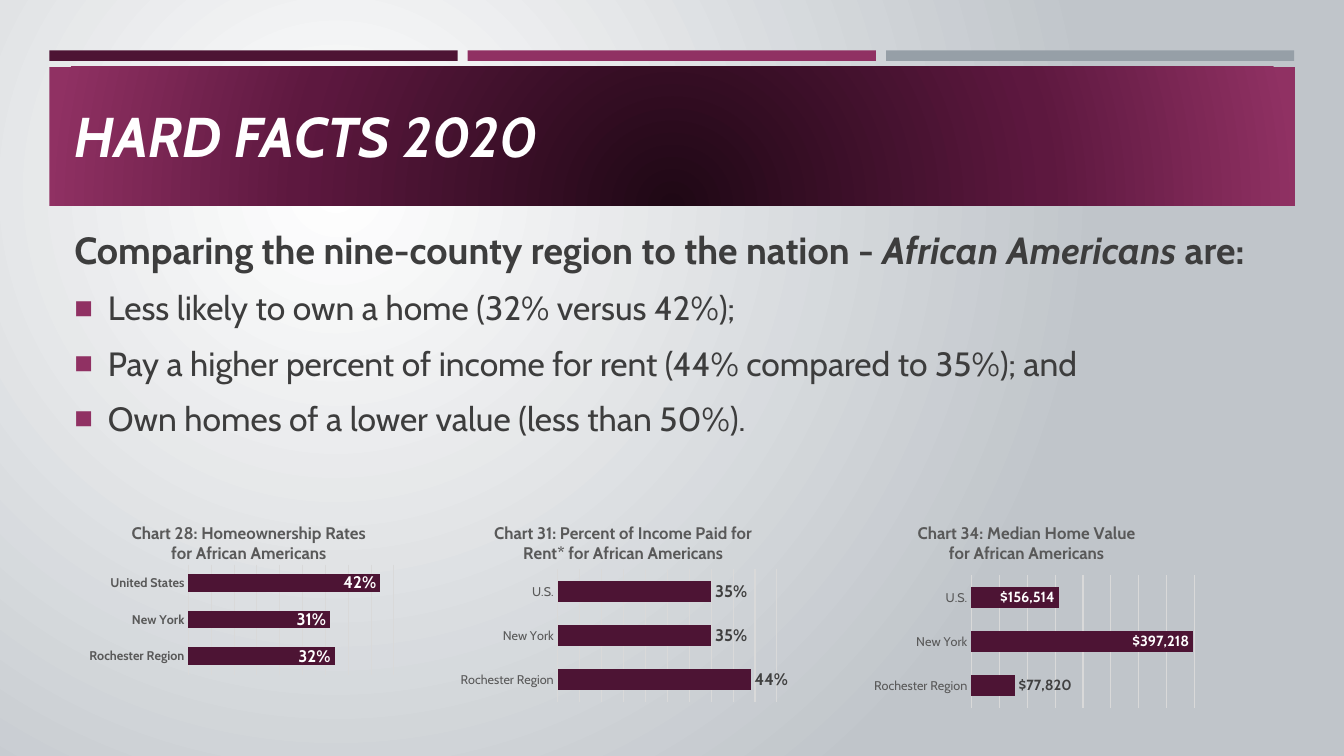
from lxml.etree import SubElement
from pptx import Presentation
from pptx.chart.data import CategoryChartData
from pptx.dml.color import RGBColor
from pptx.enum.chart import XL_CHART_TYPE, XL_LABEL_POSITION, XL_TICK_MARK
from pptx.enum.shapes import MSO_SHAPE
from pptx.enum.text import MSO_ANCHOR, MSO_AUTO_SIZE, PP_ALIGN
from pptx.oxml import parse_xml
from pptx.oxml.ns import nsdecls, qn
from pptx.util import Pt

FONT = "Cabin"
PLUM, MAGENTA, GRAY = "4D1434", "903163", "969FA7"
WHITE, BODY, LABEL, MUTED, GRID = "FFFFFF", "3D3D3D", "404040", "595959", "D9D9D9"
INSIDE, OUTSIDE = XL_LABEL_POSITION.INSIDE_END, XL_LABEL_POSITION.OUTSIDE_END
rgb = RGBColor.from_string


def style(font, size, color, bold=False, italic=False):
    font.name, font.size, font.bold, font.italic = FONT, Pt(size), bold, italic
    font.color.rgb = rgb(color)


def radial_gradient(fill, element, stops, focus):
    """Give element a circular gradient; focus holds the l, t, r, b percentages."""
    fill.gradient()
    gradient = element.find(".//" + qn("a:gradFill"))
    gradient.clear()
    stop_list = SubElement(gradient, qn("a:gsLst"))
    for position, color in stops:
        stop = SubElement(stop_list, qn("a:gs"), pos=str(position * 1000))
        SubElement(stop, qn("a:srgbClr"), val=color)
    circle = SubElement(gradient, qn("a:path"), path="circle")
    sides = {side: str(percent * 1000) for side, percent in zip("ltrb", focus)}
    SubElement(circle, qn("a:fillToRect"), **sides)


presentation = Presentation()
presentation.slide_width, presentation.slide_height = Pt(960), Pt(540)
slide = presentation.slides.add_slide(presentation.slide_layouts[5])
radial_gradient(slide.background.fill, slide._element,
                [(0, WHITE), (100, "C0C5CA")], (50, 50, 100, 100))

# Header strips and title band
for column, color in enumerate((PLUM, MAGENTA, GRAY)):
    strip = slide.shapes.add_shape(MSO_SHAPE.RECTANGLE, Pt(35.3 + 298.8 * column),
                                   Pt(36), Pt(291.6), Pt(7.5))
    strip.shadow.inherit = False
    strip.fill.solid()
    strip.fill.fore_color.rgb = rgb(color)
    strip.line.fill.background()

band = slide.shapes.add_shape(MSO_SHAPE.RECTANGLE, Pt(35.3), Pt(47.5), Pt(889.9), Pt(99.4))
band.shadow.inherit = False
band.line.fill.background()
radial_gradient(band.fill, band._element,
                [(0, "1F0815"), (60, "5D183F"), (100, MAGENTA)], (50, 130, 50, -30))

title = slide.shapes.title
slide.shapes._spTree.append(title._element)  # in front of the band
title.left, title.top, title.width, title.height = Pt(46), Pt(57.6), Pt(868.3), Pt(77.8)
title.text_frame.auto_size = MSO_AUTO_SIZE.NONE
title.text_frame.vertical_anchor = MSO_ANCHOR.MIDDLE
heading = title.text_frame.paragraphs[0]
heading.alignment = PP_ALIGN.LEFT
heading_run = heading.add_run()
heading_run.text = "HARD FACTS 2020"
style(heading_run.font, 40, WHITE, bold=True, italic=True)

# Findings
findings = slide.shapes.add_textbox(Pt(46), Pt(158.4), Pt(868.3), Pt(370.8)).text_frame
findings.word_wrap = True
intro = findings.paragraphs[0]
intro.space_after = Pt(6)
for text, italic in (
    ("Comparing the nine-county region to the nation - ", False),
    ("African Americans ", True),
    ("are:", False),
):
    run = intro.add_run()
    run.text = text
    style(run.font, 27, BODY, bold=True, italic=italic)

for text in (
    "Less likely to own a home (32% versus 42%);",
    "Pay a higher percent of income for rent (44% compared to 35%); and",
    "Own homes of a lower value (less than 50%).",
):
    finding = findings.add_paragraph()
    finding.space_before, finding.space_after = Pt(4.8), Pt(6)
    properties = finding._p.get_or_add_pPr()
    properties.set("marL", str(Pt(24)))
    properties.set("indent", str(-Pt(24)))
    bullet_color = SubElement(properties, qn("a:buClr"))
    SubElement(bullet_color, qn("a:srgbClr"), val=MAGENTA)
    SubElement(properties, qn("a:buSzPct"), val="92000")
    SubElement(properties, qn("a:buFont"), typeface="Arial")
    SubElement(properties, qn("a:buChar"), char="■")
    run = finding.add_run()
    run.text = text
    style(run.font, 24, BODY)

# Bar charts; each label is (position, colour), in category order
WITHIN, BEYOND = (INSIDE, WHITE), (OUTSIDE, LABEL)
charts = [
    dict(box=(54, 361.4, 236.9, 131), heading=("Chart 28: Homeownership Rates", "for African Americans"),
         heading_at=(0.16, 0.07), plot_at=(0.34, 0.32, 0.62, 0.6), top_category="United States",
         values=(0.32, 0.31, 0.42), maximum=0.45, unit=0.05, number_format="0%", overlap=76,
         bold_axis=True, label_size=12, labels=(WITHIN, WITHIN, WITHIN)),
    dict(box=(324.7, 362.2, 238.3, 143.3),
         heading=("Chart 31: Percent of Income Paid for", "Rent* for African Americans"),
         heading_at=(0.11, 0.06), plot_at=(0.31, 0.31, 0.66, 0.66), top_category="U.S.",
         values=(0.44, 0.35, 0.35), maximum=0.5, unit=0.05, number_format="0%", overlap=78,
         bold_axis=False, label_size=12, labels=(BEYOND, BEYOND, BEYOND)),
    dict(box=(619.9, 366.5, 238.3, 143.3), heading=("Chart 34: Median Home Value", "for African Americans"),
         heading_at=(0.14, 0.03), plot_at=(0.31, 0.31, 0.67, 0.66), top_category="U.S.",
         values=(77820, 397218, 156514), maximum=400000, unit=50000, number_format='"$"#,##0',
         overlap=78, bold_axis=False, label_size=10.5, labels=(BEYOND, WITHIN, WITHIN)),
]

for facts in charts:
    data = CategoryChartData(number_format=facts["number_format"])
    data.categories = ["Rochester Region", "New York", facts["top_category"]]
    data.add_series("Series 1", facts["values"])
    chart = slide.shapes.add_chart(XL_CHART_TYPE.BAR_CLUSTERED,
                                   *(Pt(length) for length in facts["box"]), data).chart
    style(chart.font, 10, "000000")
    chart.has_legend = False

    chart.has_title = True
    chart_title = chart.chart_title.text_frame
    for index, line in enumerate(facts["heading"]):
        paragraph = chart_title.add_paragraph() if index else chart_title.paragraphs[0]
        run = paragraph.add_run()
        run.text = line
        style(run.font, 12, MUTED, bold=True)
    chart.chart_title.include_in_layout = False

    axis = chart.category_axis
    axis.major_tick_mark = axis.minor_tick_mark = XL_TICK_MARK.NONE
    style(axis.tick_labels.font, 9, MUTED, bold=facts["bold_axis"])
    scale = chart.value_axis
    scale.visible = False
    scale.minimum_scale, scale.maximum_scale = 0, facts["maximum"]
    scale.major_unit = facts["unit"]
    scale.has_major_gridlines = True
    for line in (axis.format.line, scale.major_gridlines.format.line):
        line.color.rgb, line.width = rgb(GRID), Pt(0.75)

    plot = chart.plots[0]
    plot.gap_width, plot.overlap, plot.vary_by_categories = 106, facts["overlap"], False
    series = plot.series[0]
    series.format.fill.solid()
    series.format.fill.fore_color.rgb = rgb(PLUM)
    series.data_labels.show_value = True
    series.data_labels.number_format = facts["number_format"]
    series.data_labels.number_format_is_linked = False
    style(series.data_labels.font, facts["label_size"], LABEL, bold=True)
    for index, (position, color) in enumerate(facts["labels"]):
        label = series.points[index].data_label
        style(label.font, facts["label_size"], color, bold=True)
        label.position = position

    chart_xml = chart._chartSpace.chart
    for owner, target, fractions in (
        (chart_xml.find(qn("c:title")), "", facts["heading_at"]),
        (chart_xml.plotArea, '<c:layoutTarget val="inner"/>', facts["plot_at"]),
    ):
        for automatic in owner.findall(qn("c:layout")):
            owner.remove(automatic)
        modes = '<c:xMode val="edge"/><c:yMode val="edge"/>'
        sizes = "".join(f'<c:{name} val="{value}"/>' for name, value in zip("xywh", fractions))
        layout = parse_xml(f'<c:layout {nsdecls("c")}><c:manualLayout>{target}{modes}{sizes}'
                           "</c:manualLayout></c:layout>")
        owner.insert(1 if owner.tag == qn("c:title") else 0, layout)

presentation.save("out.pptx")
